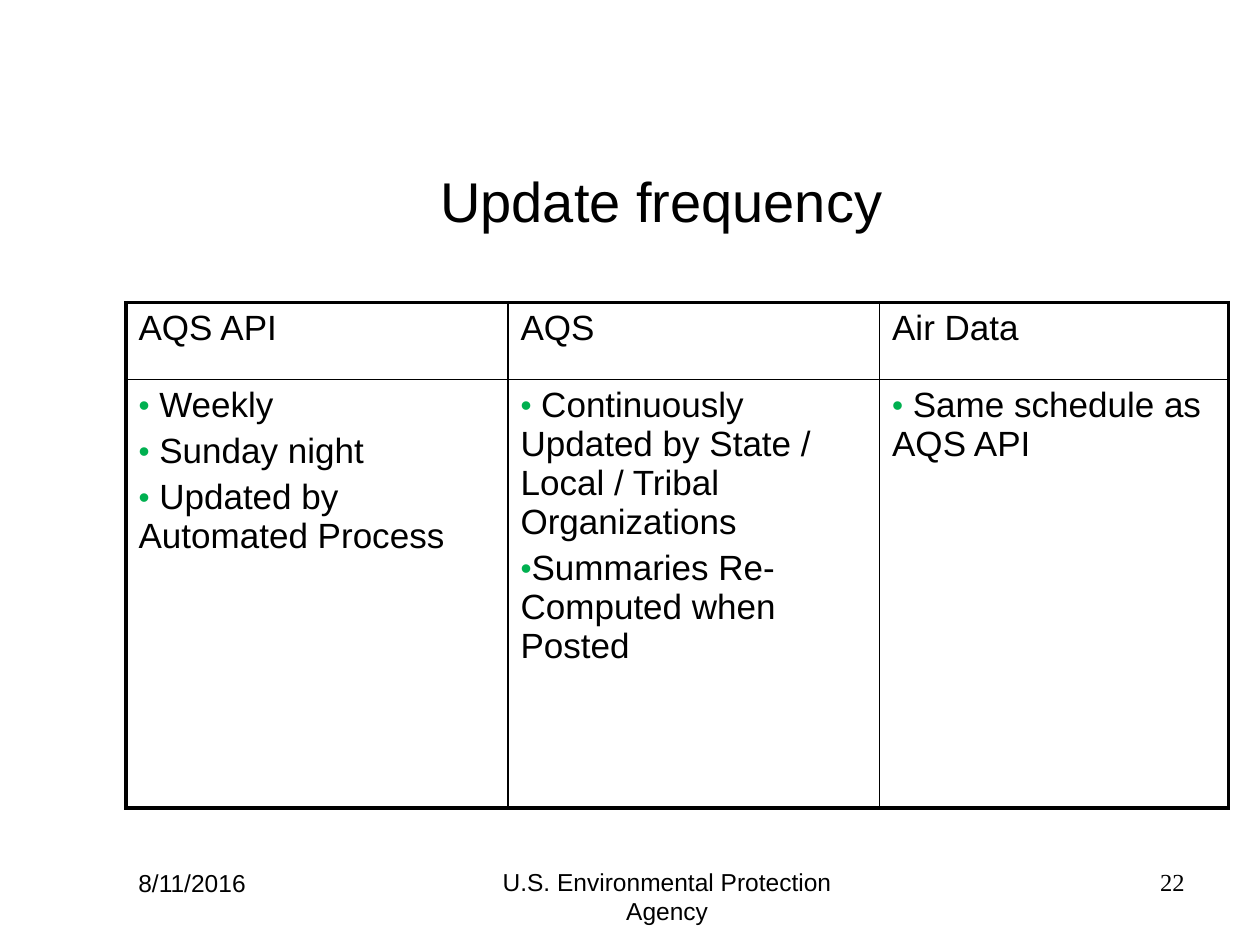
from dataclasses import dataclass

from lxml import etree
from pptx import Presentation
from pptx.dml.color import RGBColor
from pptx.enum.text import MSO_ANCHOR, PP_ALIGN
from pptx.oxml.ns import qn
from pptx.util import Cm, Pt

LEFT, CENTER, RIGHT = PP_ALIGN.LEFT, PP_ALIGN.CENTER, PP_ALIGN.RIGHT
TOP, MIDDLE = MSO_ANCHOR.TOP, MSO_ANCHOR.MIDDLE


@dataclass(frozen=True)
class Theme:
    text: str = "000000"
    bullet: str = "00B050"
    background: str = "FFFFFF"
    font: str = "Arial"
    number_font: str = "Times New Roman"
    title_size: int = 32
    table_size: int = 20
    footer_size: int = 14
    outer_line: float = 2.25
    inner_line: float = 1


THEME = Theme()
BLANK_LAYOUT = 6
COLUMN_WIDTHS = [7.7, 7.49, 7.04]
ROW_HEIGHTS = [1.55, 8.64]
HEADERS = ["AQS API", "AQS", "Air Data"]
SCHEDULES = [
    [" Weekly", " Sunday night", " Updated by Automated Process"],
    [
        " Continuously Updated by State / Local / Tribal Organizations",
        "Summaries Re-Computed when Posted",
    ],
    [" Same schedule as AQS API"],
]


def add_run(paragraph, text, size, font=THEME.font):
    run = paragraph.add_run()
    run.text = text
    run.font.size = Pt(size)
    run.font.name = font
    run.font.color.rgb = RGBColor.from_string(THEME.text)


def add_text(slide, text, box, size, alignment=LEFT, anchor=TOP, font=THEME.font):
    shape = slide.shapes.add_textbox(*[Cm(length) for length in box])
    frame = shape.text_frame
    frame.word_wrap = True
    frame.vertical_anchor = anchor
    paragraph = frame.paragraphs[0]
    paragraph.alignment = alignment
    add_run(paragraph, text, size, font)


def add_bullet(paragraph):
    properties = paragraph._p.get_or_add_pPr()
    properties.set("marL", "0")
    properties.set("indent", "0")
    color = etree.SubElement(properties, qn("a:buClr"))
    etree.SubElement(color, qn("a:srgbClr"), val=THEME.bullet)
    etree.SubElement(properties, qn("a:buSzPct"), val="90000")
    etree.SubElement(properties, qn("a:buFont"), typeface=THEME.font)
    etree.SubElement(properties, qn("a:buChar"), char="•")


def set_borders(cell, row, column):
    """Draw a heavy line where the cell meets the table's edge, a thin one elsewhere."""
    on_edge = {
        "a:lnL": column == 0,
        "a:lnR": column == len(COLUMN_WIDTHS) - 1,
        "a:lnT": row == 0,
        "a:lnB": row == len(ROW_HEIGHTS) - 1,
    }
    properties = cell._tc.get_or_add_tcPr()
    for side, outer in on_edge.items():
        width = Pt(THEME.outer_line if outer else THEME.inner_line)
        line = etree.SubElement(properties, qn(side), w=str(width))
        fill = etree.SubElement(line, qn("a:solidFill"))
        etree.SubElement(fill, qn("a:srgbClr"), val=THEME.text)


def fill_cell(cell, texts, bulleted):
    frame = cell.text_frame
    for index, text in enumerate(texts):
        paragraph = frame.add_paragraph() if index else frame.paragraphs[0]
        if bulleted:
            add_bullet(paragraph)
        if index:
            paragraph.space_before = Pt(0.2 * THEME.table_size)
        add_run(paragraph, text, THEME.table_size)


def add_schedule_table(slide):
    table = slide.shapes.add_table(
        len(ROW_HEIGHTS), len(COLUMN_WIDTHS), Cm(2.54), Cm(6.1),
        Cm(sum(COLUMN_WIDTHS)), Cm(sum(ROW_HEIGHTS)),
    ).table
    table.first_row = False
    table.horz_banding = False
    for column, width in zip(table.columns, COLUMN_WIDTHS):
        column.width = Cm(width)
    for row, height in zip(table.rows, ROW_HEIGHTS):
        row.height = Cm(height)
    rows = [[[header] for header in HEADERS], SCHEDULES]
    for row_index, row_texts in enumerate(rows):
        for column_index, texts in enumerate(row_texts):
            cell = table.cell(row_index, column_index)
            set_borders(cell, row_index, column_index)
            cell.fill.background()
            fill_cell(cell, texts, bulleted=row_index > 0)


def main():
    presentation = Presentation()
    presentation.slide_width = Cm(25.4)
    presentation.slide_height = Cm(19.05)
    slide = presentation.slides.add_slide(presentation.slide_layouts[BLANK_LAYOUT])
    slide.background.fill.solid()
    slide.background.fill.fore_color.rgb = RGBColor.from_string(THEME.background)

    add_text(slide, "Update frequency", (2.54, 2.44, 21.59, 3.18),
             THEME.title_size, CENTER, MIDDLE)
    add_schedule_table(slide)
    add_text(slide, "22", (18.85, 17.35, 5.28, 1.27),
             THEME.footer_size, RIGHT, font=THEME.number_font)
    add_text(slide, "8/11/2016", (2.54, 17.37, 5.51, 1.27), THEME.footer_size)
    add_text(slide, "U.S. Environmental Protection Agency", (9.32, 17.35, 8.26, 1.27),
             THEME.footer_size, CENTER)
    presentation.save("out.pptx")


if __name__ == "__main__":
    main()
